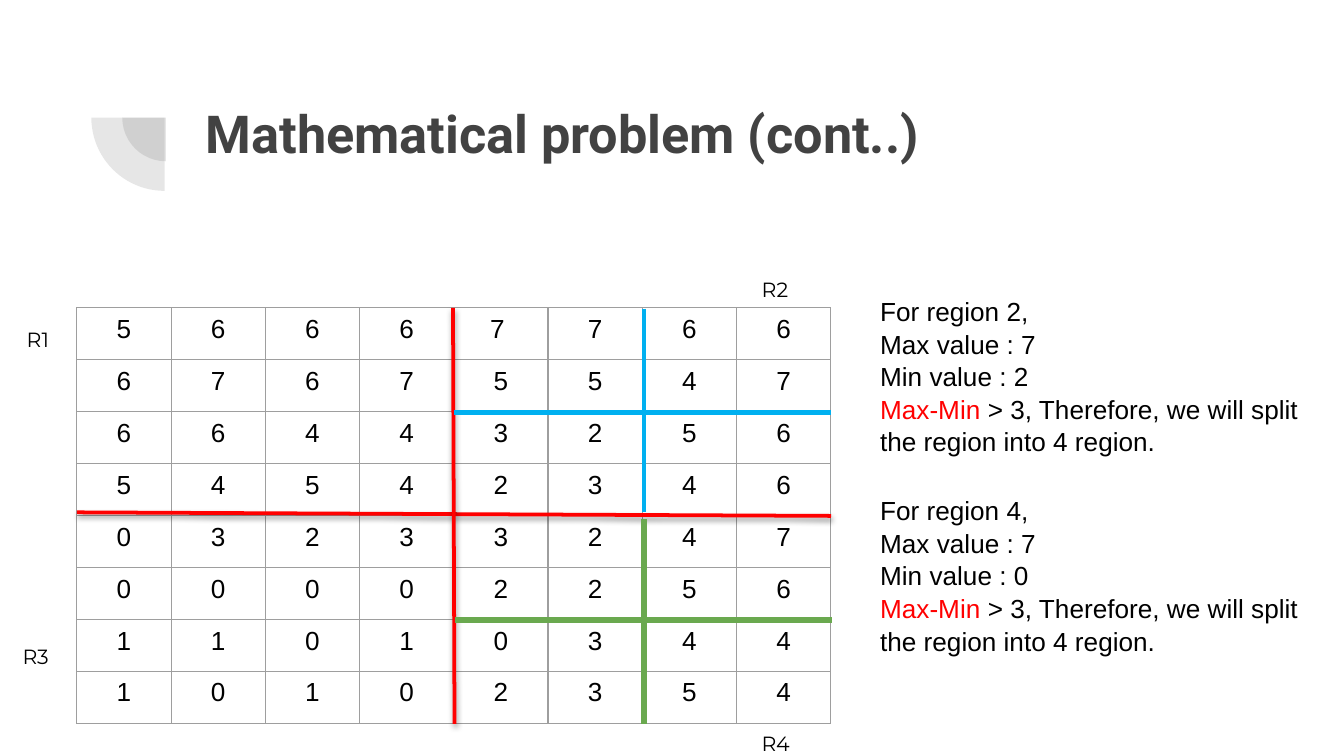
from lxml import etree
from pptx import Presentation
from pptx.dml.color import RGBColor
from pptx.enum.shapes import MSO_CONNECTOR, MSO_SHAPE
from pptx.enum.text import MSO_ANCHOR, PP_ALIGN
from pptx.oxml import parse_xml
from pptx.oxml.ns import qn
from pptx.util import Pt

NS = 'xmlns:a="http://schemas.openxmlformats.org/drawingml/2006/main"'
BLACK, DARK, GREY = "000000", "424242", "9E9E9E"
RED, BLUE, GREEN = "FF0000", "00B0F0", "6AA94F"

TITLE = "Mathematical problem (cont..)"
GRID = [
    ["5", "6", "6", "6", "7 ", "7", "6", "6"],
    ["6", "7", "6", "7", "5", "5", "4", "7"],
    ["6", "6", "4", "4", "3", "2", "5", "6"],
    ["5", "4", "5", "4", "2", "3", "4", "6"],
    ["0", "3", "2", "3", "3", "2", "4", "7"],
    ["0", "0", "0", "0", "2", "2", "5", "6"],
    ["1", "1", "0", "1", "0", "3", "4", "4"],
    ["1", "0", "1", "0", "2", "3", "5", "4"],
]
# region, max, min, top of the note
NOTES = [(2, 7, 2, 154.1), (4, 7, 0, 260.8)]
# text, left, top
LABELS = [("R1", 7.2, 171.4), ("R2", 401, 144.7), ("R3", 5, 341.3), ("R4", 401, 388.1)]

LEFT, TOP, COLUMN, ROW = 41.2, 164.9, 50.5, 27.86
RIGHT, BOTTOM = LEFT + 8 * COLUMN, TOP + 8 * ROW
MIDDLE, SPLIT = LEFT + 4 * COLUMN, 345
# start, end, colour, width, has shadow
MAIN_CUTS = [
    ((LEFT, 274.5), (RIGHT, 276.4), RED, 2, True),
    ((MIDDLE - 0.5, TOP), (MIDDLE + 0.3, BOTTOM), RED, 2, True),
]
SUB_CUTS = [
    ((MIDDLE, 221), (RIGHT, 221), BLUE, 2.25, False),
    ((SPLIT, 165.5), (SPLIT, 274.5), BLUE, 2.25, False),
    ((SPLIT, 278), (SPLIT, BOTTOM), GREEN, 3, False),
    ((MIDDLE + 0.5, 332), (RIGHT + 0.6, 332), GREEN, 3, False),
]
# centre x, centre y, diameter
PIES = [(88.9, 63, 46.8), (88.2, 63, 78.5)]


def rgb(code):
    return RGBColor.from_string(code)


def style(font, size, name, colour=BLACK, bold=False):
    font.size, font.name, font.bold = Pt(size), name, bold
    font.color.rgb = rgb(colour)


def add_box(page, left, top, width, height):
    box = page.shapes.add_textbox(Pt(left), Pt(top), Pt(width), Pt(height))
    box.text_frame.word_wrap = True
    return box


def add_pie(page, x, y, size):
    pie = page.shapes.add_shape(
        MSO_SHAPE.PIE, Pt(x - size / 2), Pt(y - size / 2), Pt(size), Pt(size))
    pie.adjustments[0], pie.adjustments[1] = 108, 162
    pie.rotation = 270
    pie.shadow.inherit = False
    pie.line.fill.background()
    pie.fill.solid()
    pie.fill.fore_color.rgb = rgb(DARK)
    colour = next(pie._element.spPr.iter(qn("a:srgbClr")))
    etree.SubElement(colour, qn("a:alpha")).set("val", "13000")


def add_cut(page, start, end, colour, width, shadowed):
    line = page.shapes.add_connector(
        MSO_CONNECTOR.STRAIGHT, *(Pt(value) for value in start + end))
    line.line.color.rgb = rgb(colour)
    line.line.width = Pt(width)
    shadow = (
        f'<a:outerShdw blurRad="{Pt(3.1)}" dist="{Pt(1.6)}" dir="5400000" rotWithShape="0">'
        f'<a:srgbClr val="{BLACK}"><a:alpha val="37000"/></a:srgbClr></a:outerShdw>'
        if shadowed else "")
    line._element.spPr.append(parse_xml(f"<a:effectLst {NS}>{shadow}</a:effectLst>"))


def add_borders(cell):
    properties = cell._tc.get_or_add_tcPr()
    for index, side in enumerate("LRTB"):
        properties.insert(index, parse_xml(
            f'<a:ln{side} {NS} w="{Pt(0.75)}"><a:solidFill><a:srgbClr val="{GREY}"/>'
            f"</a:solidFill></a:ln{side}>"))


def add_grid(page):
    table = page.shapes.add_table(
        8, 8, Pt(LEFT), Pt(TOP), Pt(8 * COLUMN), Pt(8 * ROW)).table
    table.first_row = table.horz_banding = False
    for column in table.columns:
        column.width = Pt(COLUMN)
    for row, values in zip(table.rows, GRID):
        row.height = Pt(ROW)
        for cell, value in zip(row.cells, values):
            cell.fill.background()
            add_borders(cell)
            para = cell.text_frame.paragraphs[0]
            para.text = value
            para.alignment = PP_ALIGN.CENTER
            style(para.runs[0].font, 14, "Arial")


def add_note(page, region, largest, smallest, top):
    frame = add_box(page, 464.4, top, 255.6, 108.7).text_frame
    frame.text = (f"For region {region},\nMax value : {largest}\n"
                  f"Min value : {smallest}\nMax-Min ")
    rule = frame.paragraphs[-1]
    rule.add_run().text = "> 3, Therefore, we will split the region into 4 region."
    for para in frame.paragraphs:
        para.line_spacing = 1.04
        for span in para.runs:
            style(span.font, 14, "Arial")
    rule.runs[0].font.color.rgb = rgb(RED)


def main():
    deck = Presentation()
    deck.slide_width, deck.slide_height = Pt(720), Pt(405)
    page = deck.slides.add_slide(deck.slide_layouts[5])

    title = page.shapes.title
    title.left, title.top, title.width, title.height = Pt(103), Pt(46.8), Pt(553.7), Pt(78.5)
    frame = title.text_frame
    frame.text = TITLE
    frame.vertical_anchor = MSO_ANCHOR.TOP
    frame.margin_left = frame.margin_right = frame.margin_top = frame.margin_bottom = Pt(7.2)
    frame.paragraphs[0].alignment = PP_ALIGN.LEFT
    style(frame.paragraphs[0].runs[0].font, 28, "Roboto", DARK, bold=True)

    for pie in PIES:
        add_pie(page, *pie)
    add_grid(page)
    for cut in MAIN_CUTS:
        add_cut(page, *cut)
    for text, left, top in LABELS:
        label = add_box(page, left, top, 39.6, 20.9).text_frame
        label.text = text
        style(label.paragraphs[0].runs[0].font, 11, "Montserrat")
    for note in NOTES:
        add_note(page, *note)
    for cut in SUB_CUTS:
        add_cut(page, *cut)
    deck.save("out.pptx")


if __name__ == "__main__":
    main()
